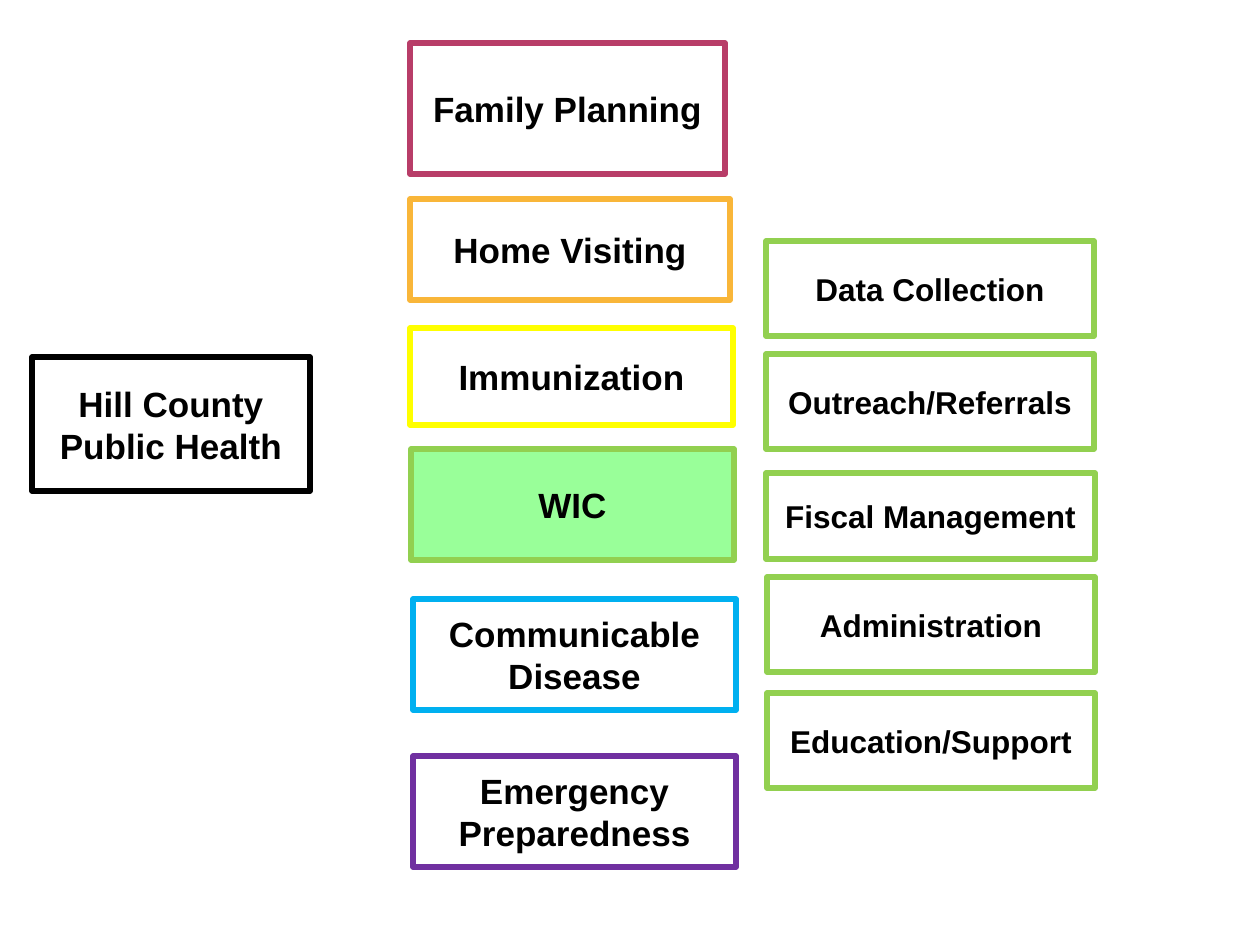
"""Build the Hill County Public Health program chart slide."""
from pptx import Presentation
from pptx.dml.color import RGBColor
from pptx.enum.shapes import MSO_SHAPE
from pptx.enum.text import MSO_ANCHOR, PP_ALIGN
from pptx.util import Emu, Pt

EMU_PER_PX = 914400 / 126
BLACK = RGBColor(0x00, 0x00, 0x00)
WHITE = RGBColor(0xFF, 0xFF, 0xFF)
ROSE = RGBColor(0xB8, 0x3D, 0x68)
ORANGE = RGBColor(0xF9, 0xB6, 0x39)
YELLOW = RGBColor(0xFF, 0xFF, 0x00)
GREEN = RGBColor(0x92, 0xD0, 0x50)
LIGHT_GREEN = RGBColor(0x99, 0xFF, 0x99)
BLUE = RGBColor(0x00, 0xB0, 0xF0)
PURPLE = RGBColor(0x70, 0x30, 0xA0)

PROGRAMS = [
    ("Family Planning", (0, 0, 315, 131), ROSE, WHITE),
    ("Home Visiting", (0, 156, 320, 101), ORANGE, WHITE),
    ("Immunization", (0, 285, 323, 97), YELLOW, WHITE),
    ("WIC", (1, 406, 323, 111), GREEN, LIGHT_GREEN),
    ("Communicable Disease", (3, 556, 323, 111), BLUE, WHITE),
    ("Emergency Preparedness", (3, 713, 323, 111), PURPLE, WHITE),
]
SERVICES = [
    ("Data Collection", (0, 0, 328, 95)),
    ("Outreach/Referrals", (0, 113, 328, 95)),
    ("Fiscal Management", (0, 232, 329, 86)),
    ("Administration", (1, 336, 328, 95)),
    ("Education/Support", (1, 452, 328, 95)),
]


def px(length):
    """Convert pixels to EMU."""
    return Emu(round(length * EMU_PER_PX))


def add_box(slide, text, box, outline, fill=WHITE, size=20):
    """Draw one outlined box with a centred bold label."""
    shape = slide.shapes.add_shape(MSO_SHAPE.RECTANGLE, *map(px, box))
    shape.shadow.inherit = False
    shape.fill.solid()
    shape.fill.fore_color.rgb = fill
    shape.line.color.rgb = outline
    shape.line.width = Pt(3.15)
    frame = shape.text_frame
    frame.word_wrap = True
    frame.vertical_anchor = MSO_ANCHOR.MIDDLE
    frame.text = text
    paragraph = frame.paragraphs[0]
    paragraph.alignment = PP_ALIGN.CENTER
    font = paragraph.runs[0].font
    font.name = "Arial"
    font.size = Pt(size)
    font.bold = True
    font.color.rgb = BLACK


def add_programs(slide, left, top):
    """Stack the department's programs from the given corner."""
    for text, (x, y, width, height), outline, fill in PROGRAMS:
        add_box(slide, text, (left + x, top + y, width, height), outline, fill)


def add_services(slide, left, top):
    """Stack the WIC services from the given corner."""
    for text, (x, y, width, height) in SERVICES:
        add_box(slide, text, (left + x, top + y, width, height), GREEN, size=18)


def main():
    """Build and save the presentation."""
    presentation = Presentation()
    presentation.slide_width = px(1260)
    presentation.slide_height = px(945)
    slide = presentation.slides.add_slide(presentation.slide_layouts[6])
    add_box(slide, "Hill County Public Health", (32, 357, 278, 134), BLACK)
    add_programs(slide, 410, 43)
    add_services(slide, 766, 241)
    presentation.save("out.pptx")


if __name__ == "__main__":
    main()
